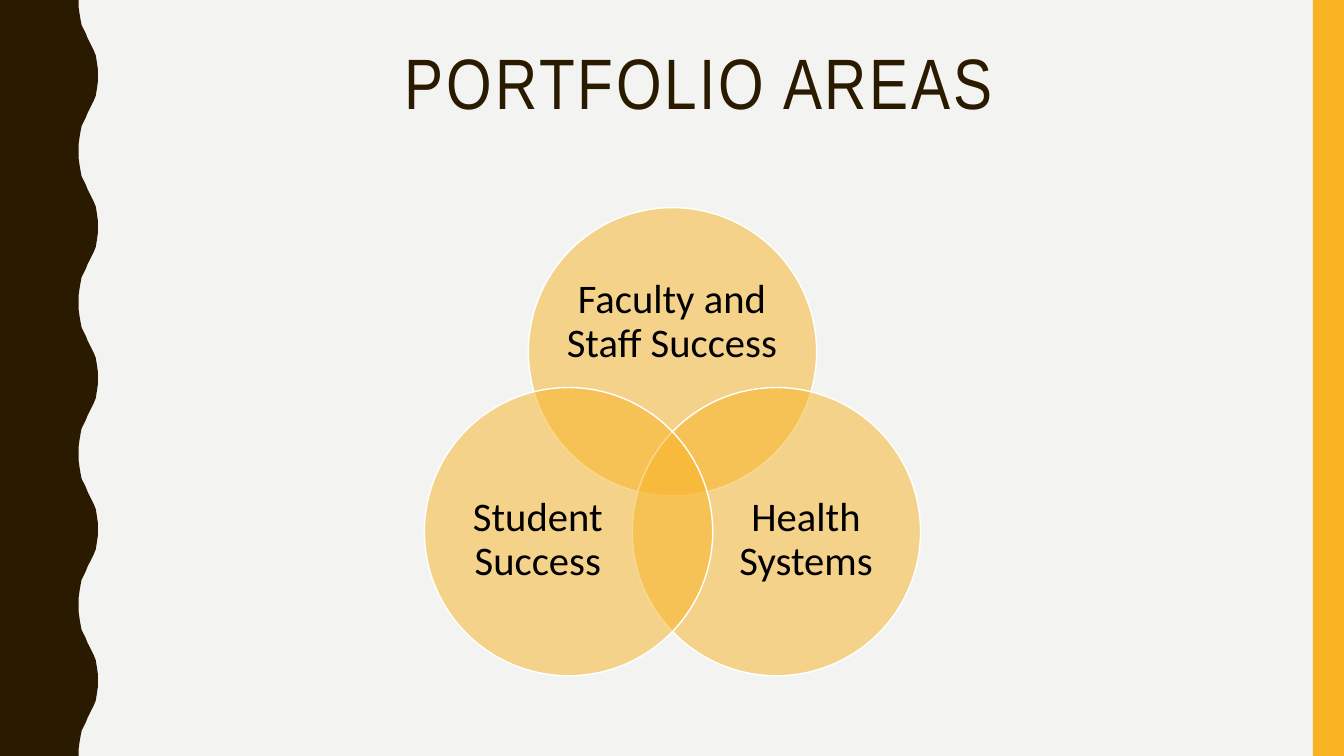
from dataclasses import dataclass
from math import cos, radians, sin

from lxml.etree import SubElement
from pptx import Presentation
from pptx.dml.color import RGBColor
from pptx.enum.shapes import MSO_SHAPE
from pptx.enum.text import MSO_ANCHOR, MSO_AUTO_SIZE, PP_ALIGN
from pptx.oxml.ns import qn
from pptx.util import Inches, Pt


@dataclass(frozen=True)
class Theme:
    paper: str = "F3F3F2"
    brown: str = "2A1A00"
    gold: str = "F8B323"
    white: str = "FFFFFF"
    black: str = "000000"
    head_font: str = "Arial Narrow"
    body_font: str = "Calibri"
    head_size: int = 51
    body_size: int = 29


THEME = Theme()
WIDTH, HEIGHT = 13.33, 7.5

# Half a wave of the left edge: x, y going down; the other half mirrors it
PERIOD = 1.5
HALF = [(0.78, 0), (0.78, 0.07), (0.79, 0.14), (0.8, 0.2), (0.81, 0.25),
        (0.83, 0.29), (0.85, 0.33), (0.87, 0.38), (0.89, 0.42), (0.91, 0.46),
        (0.93, 0.5), (0.95, 0.55), (0.96, 0.61), (0.97, 0.68), (0.97, 0.75)]

# Venn circles: centres lie on a ring, a third of a turn apart
MID_X, MID_Y = 6.67, 4.68
RING, RADIUS = 1.19, 1.43
# Text, angle, box of the label
AREAS = [
    ("Faculty and Staff Success", -90, (5.62, 2.56, 2.09, 1.28)),
    ("Health Systems", 30, (7.14, 4.58, 1.71, 1.57)),
    ("Student Success", 150, (4.48, 4.58, 1.71, 1.57)),
]


def color(code):
    return RGBColor.from_string(code)


def paint(shape, fill):
    shape.shadow.inherit = False
    shape.fill.solid()
    shape.fill.fore_color.rgb = color(fill)
    shape.line.fill.background()


def write(frame, text, font, size, ink):
    frame.word_wrap = True
    frame.auto_size = MSO_AUTO_SIZE.NONE
    frame.text = text
    para = frame.paragraphs[0]
    para.alignment = PP_ALIGN.CENTER
    para.line_spacing = 0.9
    run = para.runs[0]
    run.font.name = font
    run.font.size = Pt(size)
    run.font.color.rgb = color(ink)
    return run


def add_wave(shapes):
    wave = HALF + [(x, PERIOD - y) for x, y in HALF[-2::-1]]
    edge = [(x, y + PERIOD * turn)
            for turn in range(round(HEIGHT / PERIOD)) for x, y in wave]
    points = [(Inches(x), Inches(y)) for x, y in edge + [(0, HEIGHT)]]
    pen = shapes.build_freeform(0, 0)
    pen.add_line_segments(points, close=True)
    paint(pen.convert_to_shape(), THEME.brown)


def add_stripe(shapes):
    wide = 0.31
    stripe = shapes.add_shape(MSO_SHAPE.RECTANGLE, Inches(WIDTH - wide), 0,
                              Inches(wide), Inches(HEIGHT))
    paint(stripe, THEME.gold)


def set_title(title, text):
    title.left, title.top = Inches(1.37), Inches(0.42)
    title.width, title.height = Inches(11.13), Inches(1.63)
    frame = title.text_frame
    run = write(frame, text, THEME.head_font, THEME.head_size, THEME.brown)
    frame.vertical_anchor = MSO_ANCHOR.TOP
    run.font._element.set("spc", "200")  # letter spacing of 2 pt


def add_circle(shapes, angle):
    x = MID_X + RING * cos(radians(angle))
    y = MID_Y + RING * sin(radians(angle))
    circle = shapes.add_shape(MSO_SHAPE.OVAL,
                              Inches(x - RADIUS), Inches(y - RADIUS),
                              Inches(2 * RADIUS), Inches(2 * RADIUS))
    paint(circle, THEME.gold)
    circle.line.color.rgb = color(THEME.white)
    circle.line.width = Pt(1)
    # Half transparent fill
    tint = circle._element.spPr.find(qn("a:solidFill"))[0]
    SubElement(tint, qn("a:alpha"), val="50000")


def add_label(shapes, text, box):
    frame = shapes.add_textbox(*map(Inches, box)).text_frame
    frame.margin_left = frame.margin_right = 0
    frame.margin_top = frame.margin_bottom = 0
    frame.vertical_anchor = MSO_ANCHOR.MIDDLE
    write(frame, text, THEME.body_font, THEME.body_size, THEME.black)


def main():
    deck = Presentation()
    deck.slide_width, deck.slide_height = Inches(WIDTH), Inches(HEIGHT)
    slide = deck.slides.add_slide(deck.slide_layouts[5])
    shapes = slide.shapes

    # Backdrop
    slide.background.fill.solid()
    slide.background.fill.fore_color.rgb = color(THEME.paper)
    add_wave(shapes)
    add_stripe(shapes)

    # Title
    set_title(shapes.title, "PORTFOLIO AREAS")

    # Venn diagram
    venn = shapes.add_group_shape().shapes
    for text, angle, box in AREAS:
        add_circle(venn, angle)
        add_label(venn, text, box)

    deck.save("out.pptx")


if __name__ == "__main__":
    main()
